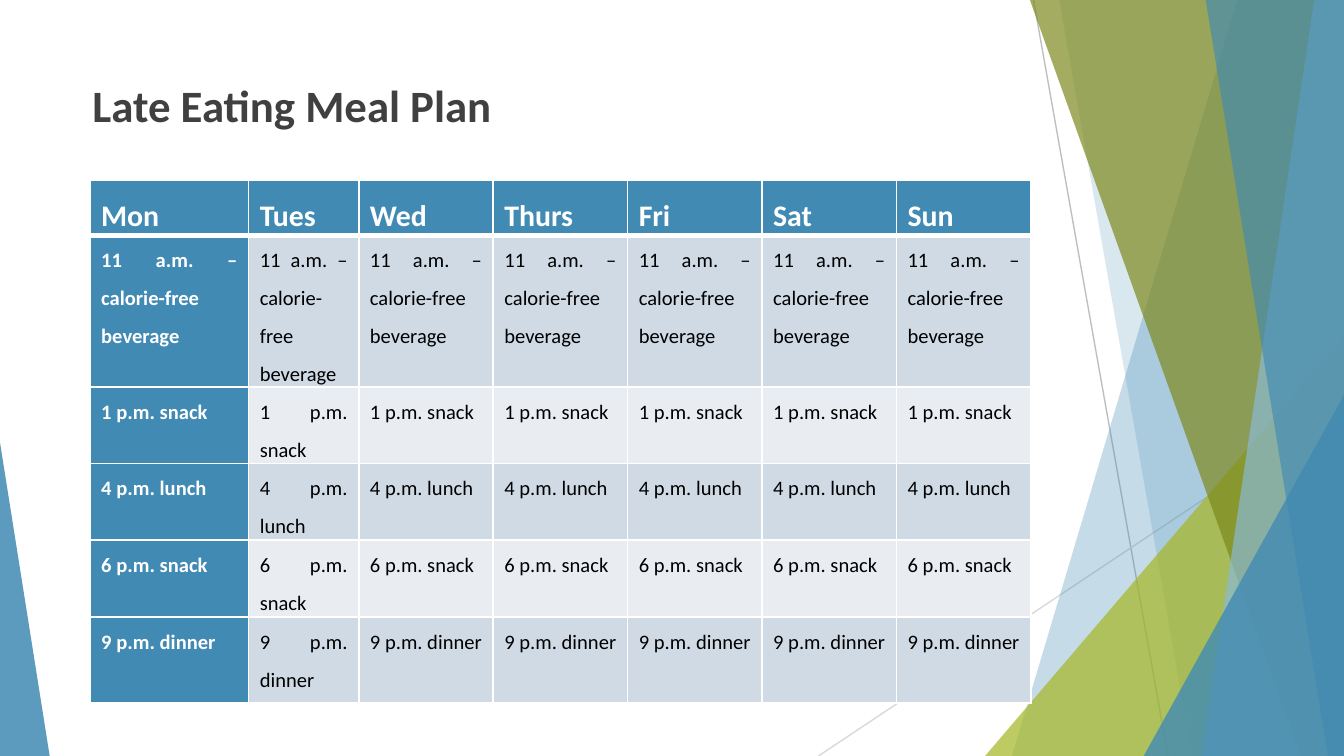
"""Build the Late Eating Meal Plan slide: a weekly table beside layered facets."""
from dataclasses import dataclass

from lxml.etree import SubElement
from pptx import Presentation
from pptx.dml.color import RGBColor
from pptx.enum.shapes import MSO_CONNECTOR as Connector, MSO_SHAPE as Shape
from pptx.enum.text import MSO_ANCHOR as Anchor, PP_ALIGN as Align
from pptx.oxml import parse_xml
from pptx.oxml.ns import nsdecls, qn
from pptx.util import Inches, Pt


@dataclass(frozen=True)
class Theme:
    font: str = "Calibri"
    title_size: float = 24
    header_size: float = 16
    body_size: float = 11
    blue: str = "418AB3"
    light_blue: str = "8ABAD4"
    lime: str = "A6B727"
    olive: str = "7D891D"
    title: str = "404040"
    white: str = "FFFFFF"
    black: str = "000000"
    bands: tuple = ("CFDAE5", "E9EDF2")


@dataclass(frozen=True)
class Ray:
    start: tuple
    end: tuple
    color: str


@dataclass(frozen=True)
class Facet:
    """A panel from a slanted left edge to the right edge of the slide."""
    top_x: float
    bottom_x: float
    color: str
    opacity: int


@dataclass(frozen=True)
class Wedge:
    left: float
    top: float
    width: float
    apex: float
    color: str
    opacity: int


THEME = Theme()
WIDTH = 10
HEIGHT = WIDTH * 9 / 16
RAYS = (
    Ray((7.69, 0), (8.69, HEIGHT), "BFBFBF"),
    Ray((WIDTH, 3.02), (6.09, HEIGHT), "D9D9D9"),
)
PANELS = (
    Facet(9.21, 7.53, THEME.blue, 30),
    Facet(7.88, 8.87, THEME.blue, 20),
    Wedge(7.33, 2.5, 2.67, 1, THEME.lime, 72),
    Facet(7.66, 9.68, THEME.olive, 70),
    Facet(9.78, 8.94, THEME.light_blue, 70),
    Facet(8.97, 9.88, THEME.blue, 65),
    Wedge(8.51, 2.94, 1.49, 1, THEME.blue, 80),
    Wedge(0, 3.29, 0.37, 0, THEME.blue, 85),
)
DAYS = ("Mon", "Tues", "Wed", "Thurs", "Fri", "Sat", "Sun")
MEALS = (
    "11 a.m. – calorie-free beverage",
    "1 p.m. snack",
    "4 p.m. lunch",
    "6 p.m. snack",
    "9 p.m. dinner",
)
COLUMN_WIDTHS = (1.18, 0.82) + (1,) * 5
ROW_HEIGHTS = (0.41, 1.13, 0.57, 0.57, 0.57, 0.64)
CELL_MARGIN = 1 / 12


def style_font(para, size: float, color: str, bold: bool) -> None:
    font = para.font
    font.name, font.size, font.bold = THEME.font, Pt(size), bold
    font.color.rgb = RGBColor.from_string(color)


def paint(shape, color: str, opacity: int) -> None:
    shape.shadow.inherit = False
    shape.line.fill.background()
    shape.fill.solid()
    shape.fill.fore_color.rgb = RGBColor.from_string(color)
    tint = shape.fill._xPr.find(qn("a:solidFill"))[0]
    SubElement(tint, qn("a:alpha"), val=str(opacity * 1000))


def add_ray(page, ray: Ray) -> None:
    line = page.shapes.add_connector(
        Connector.STRAIGHT, *(Inches(value) for value in ray.start + ray.end))
    line.line.width = Pt(0.75)
    line.line.color.rgb = RGBColor.from_string(ray.color)
    SubElement(line._element.spPr, qn("a:effectLst"))


def add_facet(page, facet: Facet) -> None:
    top = -0.01
    builder = page.shapes.build_freeform(Inches(facet.top_x), Inches(top))
    corners = ((WIDTH, top), (WIDTH, HEIGHT), (facet.bottom_x, HEIGHT))
    builder.add_line_segments([(Inches(x), Inches(y)) for x, y in corners], close=True)
    paint(builder.convert_to_shape(), facet.color, facet.opacity)


def add_wedge(page, wedge: Wedge) -> None:
    shape = page.shapes.add_shape(
        Shape.ISOSCELES_TRIANGLE, Inches(wedge.left), Inches(wedge.top),
        Inches(wedge.width), Inches(HEIGHT - wedge.top))
    shape.adjustments[0] = wedge.apex
    paint(shape, wedge.color, wedge.opacity)


def add_title(page, text: str) -> None:
    box = page.shapes.add_textbox(Inches(0.59), Inches(0.53), Inches(4.57), Inches(0.71))
    box.text_frame.word_wrap = True
    para = box.text_frame.paragraphs[0]
    para.text = text
    para.space_before = Pt(7.5)
    style_font(para, THEME.title_size, THEME.title, True)


def add_borders(cell, top: float, bottom: float) -> None:
    properties = cell._tc.get_or_add_tcPr()
    sides = {"lnL": 1, "lnR": 1, "lnT": top, "lnB": bottom}
    for index, (side, points) in enumerate(sides.items()):
        properties.insert(index, parse_xml(
            f'<a:{side} {nsdecls("a")} w="{Pt(points)}"><a:solidFill>'
            f'<a:srgbClr val="{THEME.white}"/></a:solidFill></a:{side}>'))


def fill_cell(cell, text: str, row: int, column: int) -> None:
    header = row == 0
    accent = header or column == 0
    cell.margin_left = cell.margin_right = Inches(CELL_MARGIN)
    cell.margin_top = cell.margin_bottom = 0
    cell.vertical_anchor = Anchor.TOP
    cell.fill.solid()
    fill = THEME.blue if accent else THEME.bands[(row - 1) % 2]
    cell.fill.fore_color.rgb = RGBColor.from_string(fill)
    add_borders(cell, top=3 if row == 1 else 1, bottom=3 if header else 1)
    para = cell.text_frame.paragraphs[0]
    para.text = text
    para.alignment = Align.JUSTIFY
    para.line_spacing = 1.5
    style_font(para, THEME.header_size if header else THEME.body_size,
               THEME.white if accent else THEME.black, accent)


def add_meal_table(page) -> None:
    rows = [DAYS] + [(meal,) * len(DAYS) for meal in MEALS]
    table = page.shapes.add_table(
        len(rows), len(DAYS), Inches(0.67), Inches(1.34),
        Inches(sum(COLUMN_WIDTHS)), Inches(sum(ROW_HEIGHTS))).table
    for column, width in zip(table.columns, COLUMN_WIDTHS):
        column.width = Inches(width)
    for row, height in zip(table.rows, ROW_HEIGHTS):
        row.height = Inches(height)
    for row, texts in enumerate(rows):
        for column, text in enumerate(texts):
            fill_cell(table.cell(row, column), text, row, column)


def main() -> None:
    deck = Presentation()
    deck.slide_width, deck.slide_height = Inches(WIDTH), Inches(HEIGHT)
    page = deck.slides.add_slide(deck.slide_layouts[6])
    for ray in RAYS:
        add_ray(page, ray)
    for panel in PANELS:
        draw = add_facet if isinstance(panel, Facet) else add_wedge
        draw(page, panel)
    add_title(page, "Late Eating Meal Plan")
    add_meal_table(page)
    deck.save("out.pptx")


if __name__ == "__main__":
    main()
